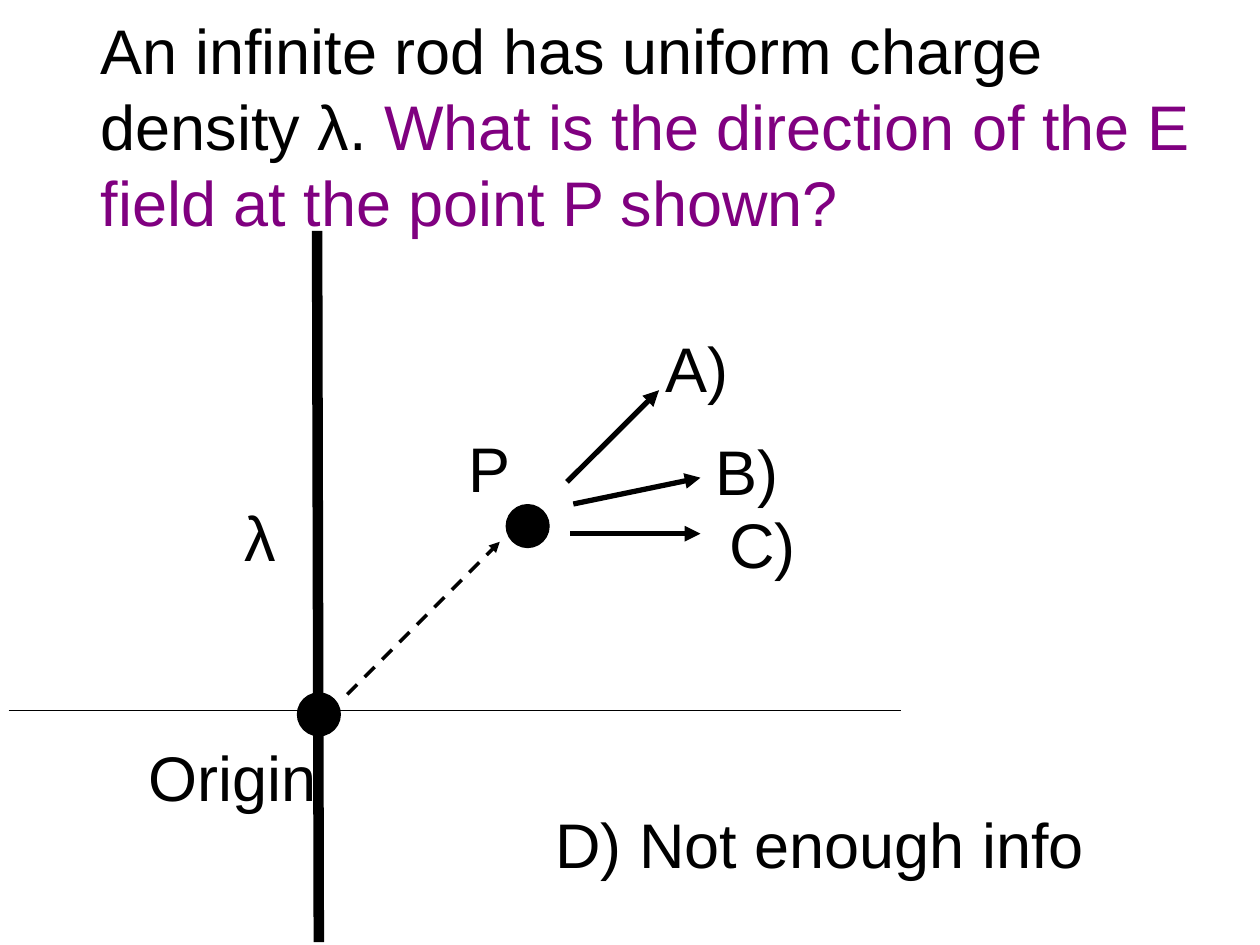
from pptx import Presentation
from pptx.dml.color import RGBColor
from pptx.enum.dml import MSO_LINE
from pptx.enum.shapes import MSO_CONNECTOR, MSO_SHAPE
from pptx.enum.text import MSO_ANCHOR, MSO_AUTO_SIZE, PP_ALIGN
from pptx.oxml.ns import qn
from pptx.util import Pt
from lxml import etree

BLACK, PURPLE = "000000", "800080"


def add_run(p, text, color=BLACK):
    r = p.add_run()
    r.text = text
    for name, value in {"name": "Arial", "size": Pt(36)}.items():
        setattr(r.font, name, value)
    r.font.color.rgb = RGBColor.from_string(color)


def add_line(x1, y1, x2, y2, width, arrow=False):
    line = s.shapes.add_connector(MSO_CONNECTOR.STRAIGHT, Pt(x1), Pt(y1), Pt(x2), Pt(y2))
    line.line.width = Pt(width)
    line.line.color.rgb = RGBColor.from_string(BLACK)
    etree.SubElement(line._element.spPr, qn("a:effectLst"))
    if arrow:
        etree.SubElement(line.line._get_or_add_ln(), qn("a:tailEnd"), type="triangle")
    return line


prs = Presentation()
prs.slide_width, prs.slide_height = Pt(720), Pt(540)
s = prs.slides.add_slide(prs.slide_layouts[5])

# Question
title = s.shapes.title
title.left, title.top, title.width, title.height = Pt(50.4), Pt(26.64), Pt(646.56), Pt(90)
tf = title.text_frame
for name, value in {"word_wrap": True, "auto_size": MSO_AUTO_SIZE.NONE,
                    "vertical_anchor": MSO_ANCHOR.MIDDLE}.items():
    setattr(tf, name, value)
p = tf.paragraphs[0]
p.alignment = PP_ALIGN.LEFT
add_run(p, "An infinite rod has uniform charge density λ. ")
add_run(p, "What is the direction of the E field at the point P shown?", PURPLE)

# Charged rod and horizontal axis
add_line(181.2, 132, 182.2, 538.4, 6)
add_line(5, 406, 514.6, 406, 0.75)

# Origin and point P
for x, y in [(170, 396), (289.3, 288.4)]:
    dot = s.shapes.add_shape(MSO_SHAPE.OVAL, Pt(x), Pt(y), Pt(24.5), Pt(24.5))
    dot.shadow.inherit = False
    dot.fill.solid()
    dot.fill.fore_color.rgb = RGBColor.from_string(BLACK)
    dot.line.color.rgb = RGBColor.from_string(BLACK)
    dot.line.width = Pt(0.75)

# Candidate field directions, then the position vector
for ends in [(324, 275.4, 376.6, 223), (326, 305, 400.3, 305), (327.6, 288, 400.3, 273)]:
    add_line(*ends, 3, arrow=True)
position = add_line(198.4, 396.8, 285.6, 309.6, 2, arrow=True)
position.line.dash_style = MSO_LINE.DASH

# Labels and answers
labels = [
    ("Origin", 77.8, 418.3, 110.2),
    ("P", 260.6, 241.9, 38.2),
    ("A)", 373, 184.6, 51.8),
    ("B)", 401.8, 243.4, 51.1),
    ("C)", 409.7, 285.1, 52.6),
    ("λ", 132.5, 281.5, 34.6),
    ("D) Not enough info", 310.3, 456.5, 319.7),
]
for text, x, y, w in labels:
    tb = s.shapes.add_textbox(Pt(x), Pt(y), Pt(w), Pt(50.8))
    tb.text_frame.word_wrap = False
    tb.text_frame.auto_size = MSO_AUTO_SIZE.SHAPE_TO_FIT_TEXT
    add_run(tb.text_frame.paragraphs[0], text)

prs.save("out.pptx")
